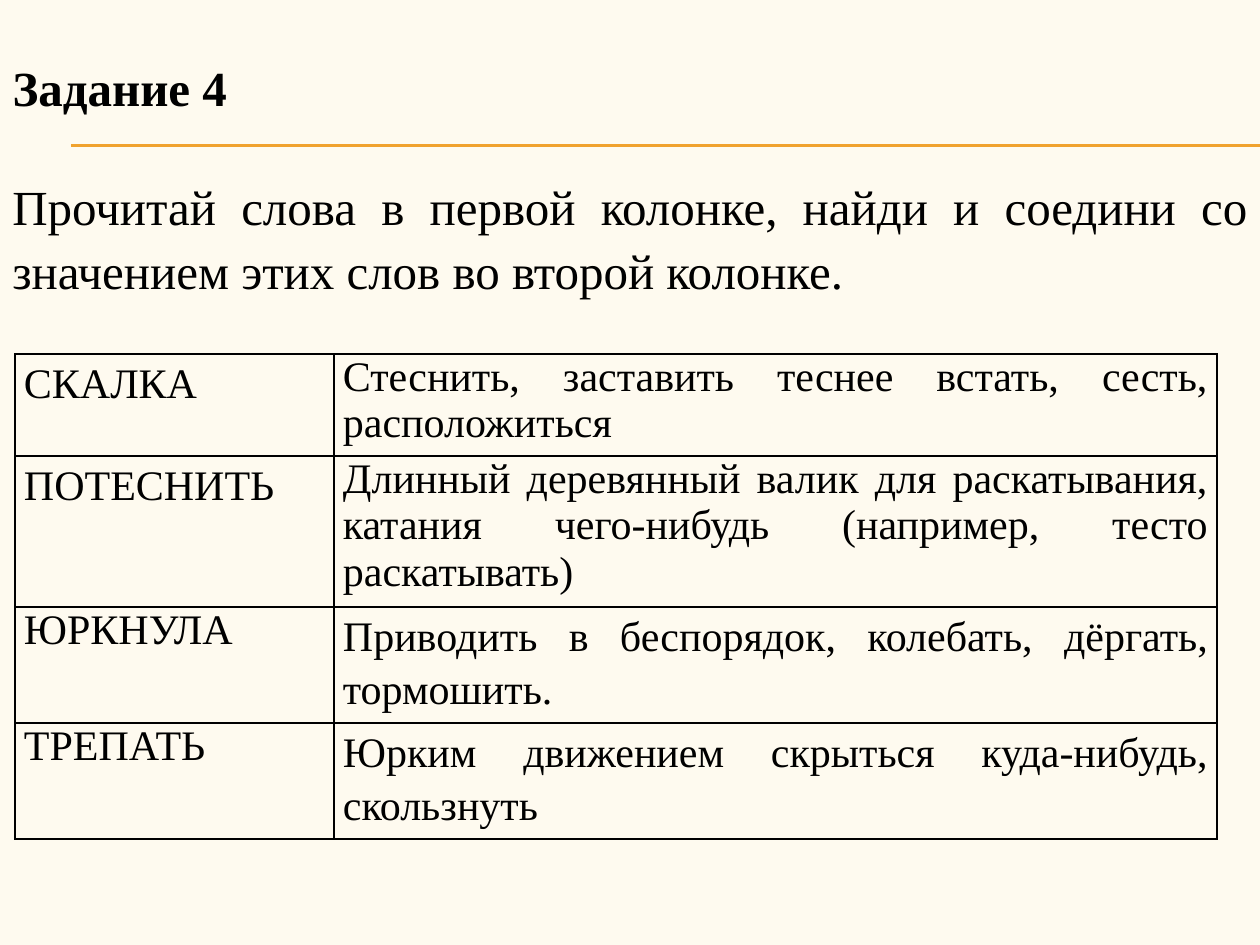
"""Build the vocabulary matching task slide."""
from dataclasses import dataclass

from lxml import etree
from pptx import Presentation
from pptx.dml.color import RGBColor
from pptx.enum.shapes import MSO_CONNECTOR
from pptx.enum.text import MSO_ANCHOR, MSO_AUTO_SIZE, PP_ALIGN
from pptx.oxml.ns import qn
from pptx.slide import Slide
from pptx.util import Pt

STRAIGHT = MSO_CONNECTOR.STRAIGHT
TOP = MSO_ANCHOR.TOP
NO_RESIZE = MSO_AUTO_SIZE.NONE
LEFT, JUSTIFY = PP_ALIGN.LEFT, PP_ALIGN.JUSTIFY

CREAM = RGBColor(0xFE, 0xFA, 0xEF)
ORANGE = RGBColor(0xF0, 0xA2, 0x2E)
BLACK = RGBColor(0, 0, 0)

EMU_PER_PX = 914400 // 126
SLIDE_WIDTH, SLIDE_HEIGHT = 1260, 945
RULE_LEFT = 71
RULE_TOPS = (145, 146)
COLUMN_WIDTHS = (319, 883)
ROW_HEIGHTS = (102, 150, 116, 116)
LOOSE = 1.15
ROWS = (
    ("СКАЛКА", LOOSE, "Стеснить, заставить теснее встать, сесть, расположиться", 1.0),
    ("ПОТЕСНИТЬ", LOOSE,
     "Длинный деревянный валик для раскатывания, катания чего-нибудь "
     "(например, тесто раскатывать)", 1.0),
    ("ЮРКНУЛА", 1.0, "Приводить в беспорядок, колебать, дёргать, тормошить.", LOOSE),
    ("ТРЕПАТЬ", 1.0, "Юрким движением скрыться куда-нибудь, скользнуть", LOOSE),
)


def px(*lengths):
    """Turn pixel lengths into EMU."""
    return [length * EMU_PER_PX for length in lengths]


@dataclass
class TaskSlide:
    """Style and current slide, with a method for each kind of element."""
    slide: Slide
    font_name: str = "Times New Roman"
    heading_size: int = 28
    cell_size: int = 24
    heading_spacing: float = 1.1
    cell_margin: int = 9

    def background(self, color):
        """Fill the slide background."""
        fill = self.slide.background.fill
        fill.solid()
        fill.fore_color.rgb = color

    def set_text(self, text_frame, text, size, alignment, spacing, bold=False):
        """Set one formatted paragraph in a text frame."""
        text_frame.text = text
        text_frame.word_wrap = True
        paragraph = text_frame.paragraphs[0]
        paragraph.alignment = alignment
        paragraph.line_spacing = spacing
        for run in paragraph.runs:
            font = run.font
            font.name, font.size, font.bold = self.font_name, Pt(size), bold
            font.color.rgb = BLACK

    def title(self, text, left, top, width, height):
        """Place and format the title placeholder."""
        shape = self.slide.shapes.title
        shape.left, shape.top, shape.width, shape.height = px(left, top, width, height)
        text_frame = shape.text_frame
        text_frame.vertical_anchor = TOP
        text_frame.auto_size = NO_RESIZE
        self.set_text(text_frame, text, self.heading_size, LEFT, self.heading_spacing, True)

    def text(self, text, left, top, width, height):
        """Add a justified text box."""
        shape = self.slide.shapes.add_textbox(*px(left, top, width, height))
        self.set_text(shape.text_frame, text, self.heading_size, JUSTIFY, self.heading_spacing)

    def rule(self, left, top, right):
        """Add a thin horizontal line."""
        line = self.slide.shapes.add_connector(STRAIGHT, *px(left, top, right, top))
        line.line.color.rgb = ORANGE
        line.line.width = Pt(0.75)
        etree.SubElement(line._element.spPr, qn("a:effectLst"))

    def border(self, cell):
        """Draw all four borders of a cell."""
        properties = cell._tc.get_or_add_tcPr()
        for index, side in enumerate(("lnL", "lnR", "lnT", "lnB")):
            line = etree.Element(qn(f"a:{side}"), w=str(Pt(1)))
            fill = etree.SubElement(line, qn("a:solidFill"))
            etree.SubElement(fill, qn("a:srgbClr"), val=str(BLACK))
            properties.insert(index, line)

    def cell(self, cell, text, alignment, spacing):
        """Fill in one table cell."""
        cell.fill.background()
        cell.margin_left, cell.margin_right = px(self.cell_margin, self.cell_margin)
        cell.margin_top = cell.margin_bottom = 0
        cell.vertical_anchor = TOP
        self.set_text(cell.text_frame, text, self.cell_size, alignment, spacing)
        self.border(cell)

    def table(self, rows, left, top):
        """Add the table of words and meanings."""
        table = self.slide.shapes.add_table(
            len(rows), len(COLUMN_WIDTHS),
            *px(left, top, sum(COLUMN_WIDTHS), sum(ROW_HEIGHTS))).table
        table.first_row = table.horz_banding = False
        for column, width in zip(table.columns, px(*COLUMN_WIDTHS)):
            column.width = width
        for row, height in zip(table.rows, px(*ROW_HEIGHTS)):
            row.height = height
        for index, (word, word_spacing, meaning, meaning_spacing) in enumerate(rows):
            self.cell(table.cell(index, 0), word, LEFT, word_spacing)
            self.cell(table.cell(index, 1), meaning, JUSTIFY, meaning_spacing)


def main():
    """Build and save the presentation."""
    presentation = Presentation()
    presentation.slide_width, presentation.slide_height = px(SLIDE_WIDTH, SLIDE_HEIGHT)
    task = TaskSlide(presentation.slides.add_slide(presentation.slide_layouts[5]))
    task.background(CREAM)
    for top in RULE_TOPS:
        task.rule(RULE_LEFT, top, SLIDE_WIDTH)
    task.title("Задание 4", 0, 45, SLIDE_WIDTH, 72)
    task.text("Прочитай слова в первой колонке, найди и соедини со значением "
              "этих слов во второй колонке.", 0, 164, SLIDE_WIDTH, 132)
    task.table(ROWS, 15, 354)
    presentation.save("out.pptx")


if __name__ == "__main__":
    main()
